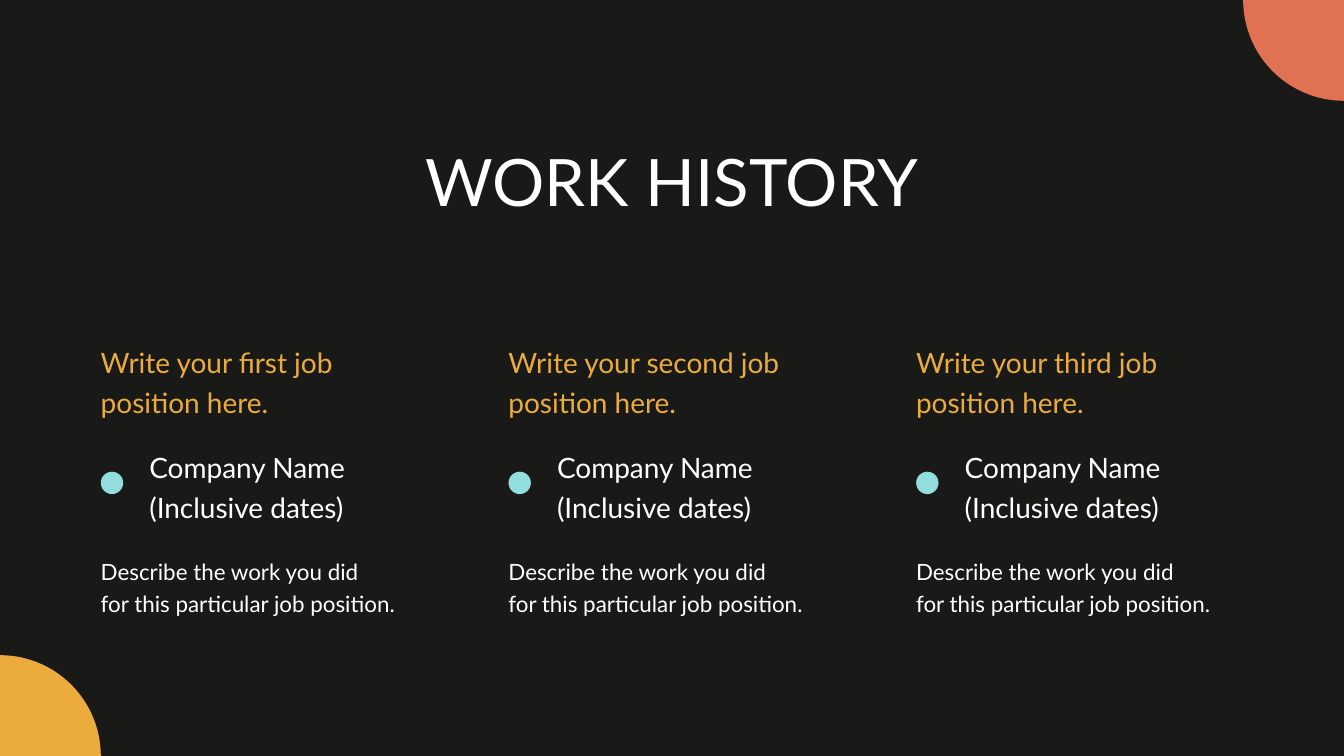
from math import cos, pi, sin

from pptx import Presentation
from pptx import util as u
from pptx.dml.color import RGBColor
from pptx.enum import shapes, text

COLORS = {
    "background": "191918",
    "white": "FFFFFF",
    "amber": "EBAC3D",
    "aqua": "92DDDD",
    "coral": "E17153",
}
WIDTH, HEIGHT = 720, 405
MARGIN = 54
COLUMN_PITCH = 218.4
COLUMN_WIDTH = 175.7
DOT_SIZE = 12
DATES_INDENT = 26


def add_text(parent, lines, left, top, width, height, size, color,
             spacing=1.2, align=text.PP_ALIGN.LEFT):
    """Add a text box without insets, one paragraph for each line."""
    box = parent.add_textbox(u.Pt(left), u.Pt(top), u.Pt(width), u.Pt(height))
    frame = box.text_frame
    frame.word_wrap = True
    frame.margin_left = frame.margin_right = 0
    frame.margin_top = frame.margin_bottom = 0
    frame.text = "\n".join(lines)
    for para in frame.paragraphs:
        para.alignment = align
        para.line_spacing = spacing
        for span in para.runs:
            span.font.name = "Lato"
            span.font.size = u.Pt(size)
            span.font.color.rgb = RGBColor.from_string(COLORS[color])


def paint(shape, color):
    shape.fill.solid()
    shape.fill.fore_color.rgb = RGBColor.from_string(COLORS[color])
    shape.line.fill.background()
    shape.shadow.inherit = False


deck = Presentation()
deck.slide_width, deck.slide_height = u.Pt(WIDTH), u.Pt(HEIGHT)
page = deck.slides.add_slide(deck.slide_layouts[6])
page.background.fill.solid()
page.background.fill.fore_color.rgb = RGBColor.from_string(COLORS["background"])

# Title
add_text(page.shapes, ["WORK HISTORY"], 114.6, 75.6, 490.8, 42.5, 35, "white",
         spacing=1, align=text.PP_ALIGN.CENTER)

# One group for each job
for index, ordinal in enumerate(["first", "second", "third"]):
    left = MARGIN + index * COLUMN_PITCH
    job = page.shapes.add_group_shape().shapes
    add_text(job, ["Describe the work you did", "for this particular job position."],
             left, 296, COLUMN_WIDTH, 32, 12, "white")
    add_text(job, [f"Write your {ordinal} job position here."],
             left, 181.5, COLUMN_WIDTH, 40, 15, "amber")
    dot = job.add_shape(shapes.MSO_SHAPE.OVAL, u.Pt(left), u.Pt(252.7),
                        u.Pt(DOT_SIZE), u.Pt(DOT_SIZE))
    paint(dot, "aqua")
    add_text(job, ["Company Name", "(Inclusive dates)"],
             left + DATES_INDENT, 237.5, COLUMN_WIDTH - DATES_INDENT, 40, 15, "white")

# Quarter discs centred on two slide corners: centre, start angle, colour
STEPS = 60
for center_x, center_y, start, color in [(WIDTH, 0, pi / 2, "coral"),
                                         (0, HEIGHT, -pi / 2, "amber")]:
    angles = [start + pi / 2 * step / STEPS for step in range(STEPS + 1)]
    arc = [(u.Pt(center_x + MARGIN * cos(angle)), u.Pt(center_y + MARGIN * sin(angle)))
           for angle in angles]
    outline = page.shapes.build_freeform(u.Pt(center_x), u.Pt(center_y))
    outline.add_line_segments(arc, close=True)
    paint(outline.convert_to_shape(), color)

deck.save("out.pptx")
